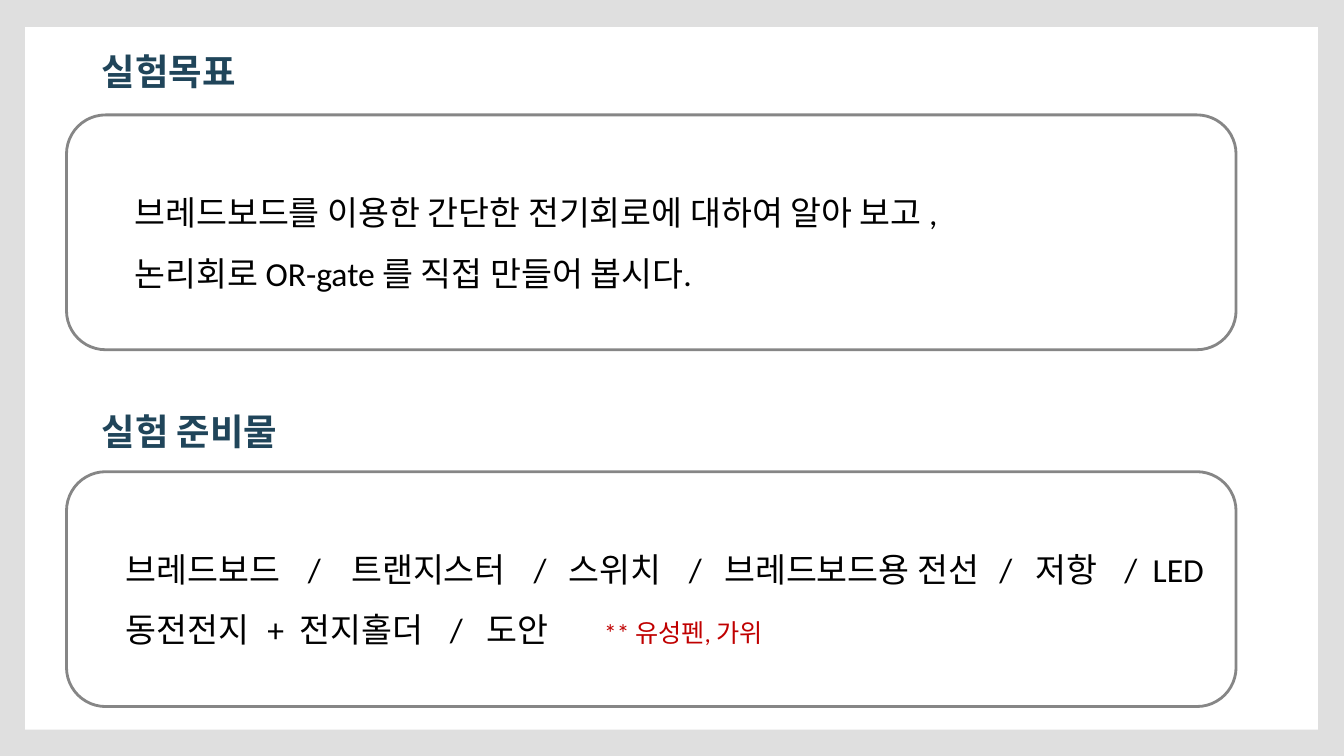
from lxml import etree
from pptx import Presentation
from pptx.dml.color import RGBColor
from pptx.enum.shapes import MSO_SHAPE
from pptx.enum.text import MSO_ANCHOR, PP_ALIGN
from pptx.oxml.ns import qn
from pptx.util import Inches, Pt

RECTANGLE = MSO_SHAPE.RECTANGLE
ROUNDED = MSO_SHAPE.ROUNDED_RECTANGLE
MIDDLE = MSO_ANCHOR.MIDDLE
LEFT = PP_ALIGN.LEFT

COLORS = {
    "backdrop": "DFDFDF",
    "paper": "FFFFFF",
    "heading": "20455A",
    "outline": "868686",
    "body": "000000",
    "extra": "C00000",
}


def rgb(name):
    return RGBColor.from_string(COLORS[name])


def add_tab_stops(paragraph, stops):
    tab_list = etree.SubElement(paragraph._p.get_or_add_pPr(), qn("a:tabLst"))
    for stop in stops:
        etree.SubElement(tab_list, qn("a:tab"), pos=str(Inches(stop)), algn="l")


class LessonSlide:
    FONT = "Calibri"
    INSET = 0.1

    def __init__(self, slide):
        self.slide = slide
        fill = slide.background.fill
        fill.solid()
        fill.fore_color.rgb = rgb("backdrop")

    def style(self, font, size, color, bold=False):
        font.name = self.FONT
        font.size = Pt(size)
        font.bold = bold
        font.color.rgb = rgb(color)

    def panel(self, preset, left, top, width, height, outline=None):
        panel = self.slide.shapes.add_shape(
            preset, Inches(left), Inches(top), Inches(width), Inches(height))
        panel.shadow.inherit = False
        panel.fill.solid()
        panel.fill.fore_color.rgb = rgb("paper")
        if outline:
            panel.line.color.rgb = rgb(outline)
            panel.line.width = Pt(2)
        else:
            panel.line.fill.background()
        return panel

    def heading(self, title, top, width):
        box = self.slide.shapes.add_textbox(
            Inches(0.91), Inches(top), Inches(width), Inches(0.48))
        frame = box.text_frame
        frame.word_wrap = True
        frame.margin_left = frame.margin_right = Inches(self.INSET)
        frame.margin_top = frame.margin_bottom = Inches(self.INSET)
        heading = frame.paragraphs[0]
        heading.text = title
        self.style(heading.font, 26, "heading", bold=True)

    def card(self, top, indent, lines):
        """Rounded card; each line is (runs, tab stops), each run (text, size, color)."""
        frame = self.panel(ROUNDED, 0.66, top, 11.6, 2.33, "outline").text_frame
        frame.word_wrap = True
        frame.vertical_anchor = MIDDLE
        frame.margin_left = Inches(self.INSET + indent)
        for index, (runs, stops) in enumerate(lines):
            line = frame.add_paragraph() if index else frame.paragraphs[0]
            line.alignment = LEFT
            line.line_spacing = 1.5
            add_tab_stops(line, stops)
            for text, size, color in runs:
                run = line.add_run()
                run.text = text
                if len(runs) > 1:
                    self.style(run.font, size, color)
            if len(runs) == 1:
                self.style(line.font, size, color)


def main():
    deck = Presentation()
    deck.slide_width, deck.slide_height = Inches(13.33), Inches(7.5)
    lesson = LessonSlide(deck.slides.add_slide(deck.slide_layouts[6]))
    lesson.panel(RECTANGLE, 0.25, 0.27, 12.82, 6.97)

    goals = ["브레드보드를 이용한 간단한 전기회로에 대하여 알아 보고 ,",
             "논리회로 OR-gate 를 직접 만들어 봅시다."]
    lesson.heading("실험목표", 0.39, 1.96)
    lesson.card(1.14, 0.46, [([(goal, 24, "body")], []) for goal in goals])

    parts = ["브레드보드", "트랜지스터", "스위치", "브레드보드용 전선", "저항", "LED"]
    part_stops = [1.81, 2.24, 4.05, 4.4, 5.59, 5.94, 8.67, 9.03, 9.91, 10.19]
    power_stops = [1.41, 1.73, 3.22, 3.58, 4.75]
    lesson.heading("실험 준비물", 3.96, 2.3)
    lesson.card(4.68, 0.37, [
        ([("\t/\t".join(parts), 24, "body")], part_stops),
        ([("동전전지\t+\t전지홀더\t/\t도안\t", 24, "body"),
          ("** 유성펜, 가위", 18, "extra")], power_stops),
    ])
    deck.save("out.pptx")


if __name__ == "__main__":
    main()
